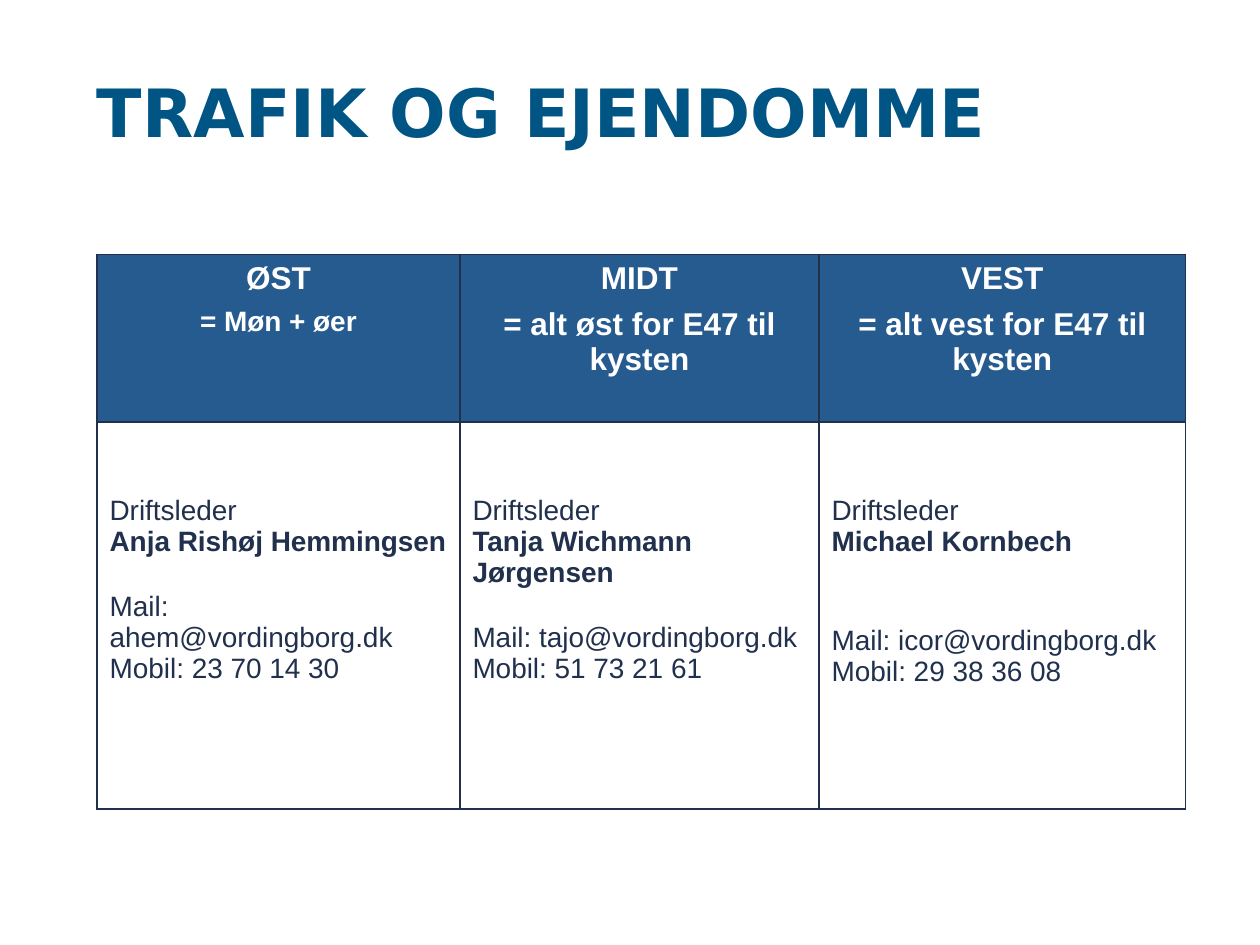
from lxml import etree
from pptx import Presentation
from pptx.dml.color import RGBColor
from pptx.enum.text import MSO_ANCHOR, PP_ALIGN
from pptx.oxml.ns import qn
from pptx.util import Inches, Pt

LEFT, CENTER = PP_ALIGN.LEFT, PP_ALIGN.CENTER
TOP = MSO_ANCHOR.TOP
TEAL = RGBColor(0x00, 0x55, 0x85)
BLUE = RGBColor(0x25, 0x5B, 0x8E)
NAVY = RGBColor(0x21, 0x31, 0x4D)
WHITE = RGBColor(0xFF, 0xFF, 0xFF)

GAP = 19.2  # height of one open line, in points
COLS = (2.88, 2.85, 2.91)
ROWS = (1.33, 3.07)
# area, subtitle, subtitle size, leader, mail, mobile, open lines before mail
AREAS = (
    ("ØST", "= Møn + øer", 16, "Anja Rishøj Hemmingsen",
     "ahem@vordingborg.dk", "23 70 14 30", 1),
    ("MIDT", "= alt øst for E47 til kysten", 18, "Tanja Wichmann Jørgensen",
     "tajo@vordingborg.dk", "51 73 21 61", 1),
    ("VEST", "= alt vest for E47 til kysten", 18, "Michael Kornbech",
     "icor@vordingborg.dk", "29 38 36 08", 2),
)


def write(frame, text, first=False, size=16, bold=False, color=NAVY,
          font="Arial", align=LEFT, before=0, line=None):
    para = frame.paragraphs[0] if first else frame.add_paragraph()
    para.alignment = align
    para.space_before = Pt(before)
    if line:
        para.line_spacing = Pt(line)
    run = para.add_run()
    run.text = text
    run.font.size = Pt(size)
    run.font.bold = bold
    run.font.name = font
    run.font.color.rgb = color


def edge(cell):
    """Draw a thin navy line on all four sides of a cell."""
    props = cell._tc.get_or_add_tcPr()
    for i, side in enumerate(("a:lnL", "a:lnR", "a:lnT", "a:lnB")):
        line = etree.Element(qn(side), w=str(Pt(1)))
        fill = etree.SubElement(line, qn("a:solidFill"))
        etree.SubElement(fill, qn("a:srgbClr"), val=str(NAVY))
        props.insert(i, line)


def paint(cell, color):
    cell.fill.solid()
    cell.fill.fore_color.rgb = color
    cell.vertical_anchor = TOP
    edge(cell)


def add_title(slide, left, top, width, height):
    box = slide.shapes.add_textbox(left, top, width, height)
    frame = box.text_frame
    frame.word_wrap = True
    frame.margin_left = frame.margin_right = 0
    frame.margin_top = frame.margin_bottom = 0
    write(frame, "TRAFIK OG EJENDOMME", first=True, size=38, bold=True,
          color=TEAL, font="DejaVu Sans", line=32)


def fill_head(cell, area, sub, size):
    paint(cell, BLUE)
    style = dict(bold=True, color=WHITE, align=CENTER)
    write(cell.text_frame, area, first=True, size=18, **style)
    write(cell.text_frame, sub, size=size, before=6, **style)


def fill_body(cell, name, mail, phone, gaps):
    paint(cell, WHITE)
    cell.margin_top = Inches(0.05) + Pt(2 * GAP)
    frame = cell.text_frame
    write(frame, "Driftsleder", first=True)
    write(frame, name, bold=True)
    write(frame, f"Mail: {mail}", before=gaps * GAP)
    write(frame, f"Mobil: {phone}")


def add_areas(slide, left, top, width, height):
    table = slide.shapes.add_table(
        len(ROWS), len(COLS), left, top, width, height).table
    for row, share in zip(table.rows, ROWS):
        row.height = int(height * share / sum(ROWS))
    for col, share in zip(table.columns, COLS):
        col.width = int(width * share / sum(COLS))
    for i, (area, sub, size, *leader) in enumerate(AREAS):
        fill_head(table.cell(0, i), area, sub, size)
        fill_body(table.cell(1, i), *leader)


def main():
    deck = Presentation()
    deck.slide_width, deck.slide_height = Inches(10), Inches(7.5)
    slide = deck.slides.add_slide(deck.slide_layouts[6])
    left, width = Inches(0.77), Inches(sum(COLS))
    add_title(slide, left, Inches(0.75), width, Inches(1.07))
    add_areas(slide, left, Inches(2.02), width, Inches(sum(ROWS)))
    deck.save("out.pptx")


if __name__ == "__main__":
    main()
